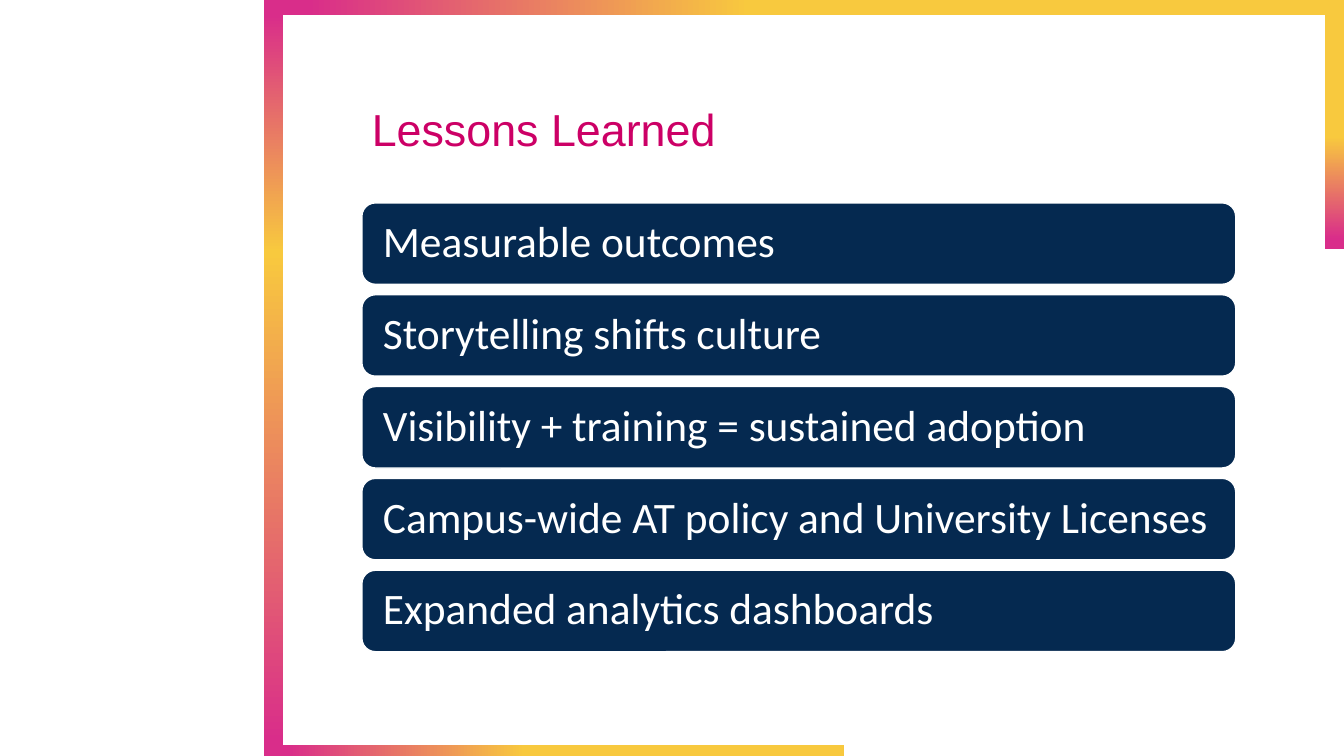
from copy import deepcopy

from pptx import Presentation
from pptx.dml.color import RGBColor
from pptx.enum.shapes import MSO_SHAPE
from pptx.enum.text import MSO_ANCHOR, PP_ALIGN
from pptx.util import Pt

RECTANGLE = MSO_SHAPE.RECTANGLE
ROUNDED = MSO_SHAPE.ROUNDED_RECTANGLE
MIDDLE = MSO_ANCHOR.MIDDLE
LEFT = PP_ALIGN.LEFT

# Content
TITLE = "Lessons Learned"
LESSONS = [
    "Measurable outcomes",
    "Storytelling shifts culture",
    "Visibility + training = sustained adoption",
    "Campus-wide AT policy and University Licenses",
    "Expanded analytics dashboards",
]
COLORS = {
    "white": "FFFFFF",
    "navy": "052950",
    "title": "CC0066",
    "pink": "D92D8A",
    "yellow": "F8C93E",
}

# Layout in points
WIDTH, HEIGHT = 960, 540
FRAME_LEFT = 188.64
SIDE, TOP_EDGE, BOTTOM_EDGE = 13.68, 10.8, 7.92
RIGHTWARD, DOWNWARD = 0, 270
CONTENT_LEFT, CONTENT_WIDTH = 258.48, 624.24
TITLE_TOP, TITLE_HEIGHT = 64.8, 59.04
BAR_TOP, BAR_HEIGHT, BAR_STEP = 144.9, 58.2, 65.6
BAR_INSET = 12.24

# Frame edges: left, top, width, height, gradient angle, stops
PINK_TO_YELLOW = [(0.04, "pink"), (0.45, "yellow")]
YELLOW_TO_PINK = [(0.55, "yellow"), (0.96, "pink")]
PINK_YELLOW_PINK = [(0, "pink"), (0.32, "yellow"), (0.98, "pink")]
FRAME = [
    (FRAME_LEFT, TOP_EDGE, SIDE, HEIGHT - TOP_EDGE, DOWNWARD, PINK_YELLOW_PINK),
    (FRAME_LEFT, 0, WIDTH - FRAME_LEFT, TOP_EDGE, RIGHTWARD, PINK_TO_YELLOW),
    (FRAME_LEFT, HEIGHT - BOTTOM_EDGE, 414, BOTTOM_EDGE, RIGHTWARD, PINK_TO_YELLOW),
    (WIDTH - SIDE, 0, SIDE, 177.84, DOWNWARD, YELLOW_TO_PINK),
]


def color(name):
    return RGBColor.from_string(COLORS[name])


def add_shape(slide, kind, left, top, width, height):
    shape = slide.shapes.add_shape(kind, Pt(left), Pt(top), Pt(width), Pt(height))
    shape.shadow.inherit = False
    return shape


def fill_gradient(shape, angle, stops):
    shape.fill.gradient()
    shape.fill.gradient_angle = angle
    stop_list = shape._element.xpath(".//a:gsLst")[0]
    while len(stop_list) < len(stops):
        stop_list.append(deepcopy(stop_list[0]))
    for stop, (position, name) in zip(shape.fill.gradient_stops, stops):
        stop.position = position
        stop.color.rgb = color(name)


def write_line(shape, text, font_name, size, color_name):
    frame = shape.text_frame
    frame.word_wrap = True
    frame.vertical_anchor = MIDDLE
    paragraph = frame.paragraphs[0]
    paragraph.text = text
    paragraph.alignment = LEFT
    paragraph.line_spacing = 0.9
    paragraph.font.name = font_name
    paragraph.font.size = Pt(size)
    paragraph.font.color.rgb = color(color_name)


presentation = Presentation()
presentation.slide_width, presentation.slide_height = Pt(WIDTH), Pt(HEIGHT)
slide = presentation.slides.add_slide(presentation.slide_layouts[6])
slide.background.fill.solid()
slide.background.fill.fore_color.rgb = color("white")

# Gradient frame
for left, top, width, height, angle, stops in FRAME:
    edge = add_shape(slide, RECTANGLE, left, top, width, height)
    fill_gradient(edge, angle, stops)
    edge.line.fill.background()

# Title
title = slide.shapes.add_textbox(
    Pt(CONTENT_LEFT), Pt(TITLE_TOP), Pt(CONTENT_WIDTH), Pt(TITLE_HEIGHT))
write_line(title, TITLE, "Arial", 32, "title")

# Lesson bars
for index, lesson in enumerate(LESSONS):
    bar = add_shape(slide, ROUNDED, CONTENT_LEFT, BAR_TOP + index * BAR_STEP,
                    CONTENT_WIDTH, BAR_HEIGHT)
    bar.fill.solid()
    bar.fill.fore_color.rgb = color("navy")
    bar.line.color.rgb = color("white")
    bar.line.width = Pt(1)
    frame = bar.text_frame
    frame.margin_left = frame.margin_right = Pt(BAR_INSET)
    frame.margin_top = frame.margin_bottom = Pt(BAR_INSET)
    write_line(bar, lesson, "Calibri", 31, "white")

presentation.save("out.pptx")
